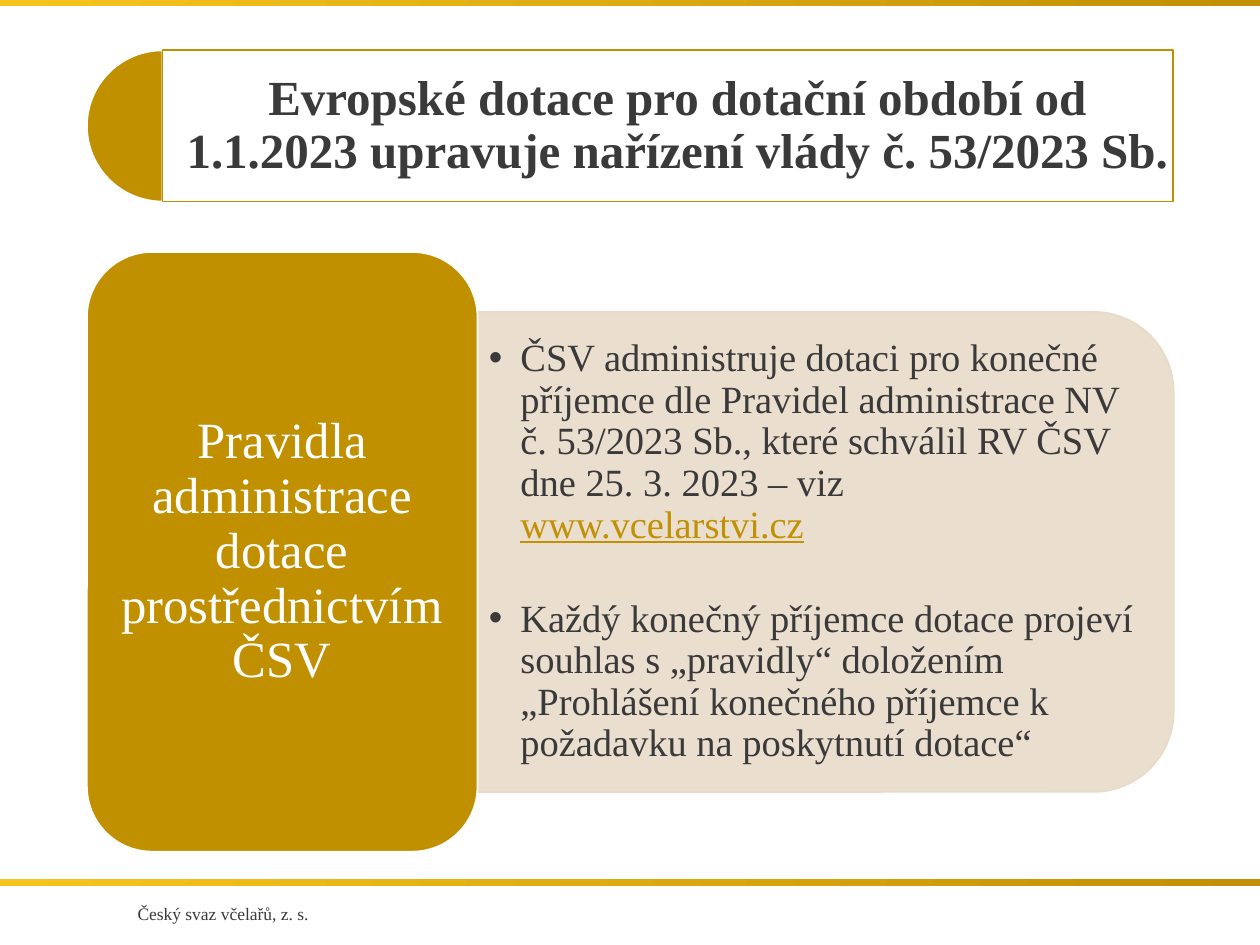
from dataclasses import dataclass

from lxml.etree import SubElement
from pptx import Presentation
from pptx.dml.color import RGBColor
from pptx.enum.shapes import MSO_SHAPE as Preset
from pptx.enum.text import MSO_ANCHOR as Anchor, MSO_AUTO_SIZE as AutoSize, PP_ALIGN as Align
from pptx.oxml.ns import qn
from pptx.util import Inches, Pt


@dataclass(frozen=True)
class Theme:
    font: str = "Times New Roman"
    ink: str = "3A3A3A"
    white: str = "FFFFFF"
    gold: str = "C19000"
    link: str = "C19003"
    bright: str = "F7C41F"
    beige: str = "E8DBCA"
    title_size: float = 28
    card_size: float = 29
    body_size: float = 22
    footer_size: float = 10
    line_spacing: float = 0.9


def rgb(value):
    return RGBColor.from_string(value)


class SlideBuilder:
    """Holds the style and the current slide."""

    def __init__(self, slide, theme):
        self.slide = slide
        self.theme = theme

    def block(self, preset, box, fill, line=None, adjustments=(), rotation=0, opacity=100):
        shape = self.slide.shapes.add_shape(preset, *map(Inches, box))
        shape.shadow.inherit = False
        shape.rotation = rotation
        for index, value in enumerate(adjustments):
            shape.adjustments[index] = value
        shape.fill.solid()
        shape.fill.fore_color.rgb = rgb(fill)
        if opacity < 100:
            color = shape.element.spPr.find(qn("a:solidFill"))[0]
            SubElement(color, qn("a:alpha"), val=str(opacity * 1000))
        if line:
            shape.line.color.rgb = rgb(line)
            shape.line.width = Pt(1)
        else:
            shape.line.fill.background()
        return shape

    def gradient_bar(self, top):
        bar = self.block(Preset.RECTANGLE, (0, top, 10, 0.05), self.theme.gold)
        bar.fill.gradient()
        bar.fill.gradient_angle = 180
        for stop, color in zip(bar.fill.gradient_stops, (self.theme.link, self.theme.bright)):
            stop.color.rgb = rgb(color)

    def frame(self, shape, insets, anchor=Anchor.MIDDLE):
        frame = shape.text_frame
        frame.word_wrap = True
        frame.auto_size = AutoSize.NONE
        frame.vertical_anchor = anchor
        frame.margin_left = frame.margin_right = Inches(insets[0])
        frame.margin_top = frame.margin_bottom = Inches(insets[1])
        return frame

    def run(self, paragraph, text, size, color, bold=False, underline=False):
        run = paragraph.add_run()
        run.text = text
        font = run.font
        font.name, font.size = self.theme.font, Pt(size)
        font.bold, font.underline = bold, underline
        font.color.rgb = rgb(color)

    def centered(self, shape, text, size, color, insets, bold=False,
                 anchor=Anchor.MIDDLE, spacing=None):
        paragraph = self.frame(shape, insets, anchor).paragraphs[0]
        paragraph.alignment = Align.CENTER
        paragraph.space_before = Pt(0)
        paragraph.line_spacing = spacing or self.theme.line_spacing
        self.run(paragraph, text, size, color, bold)

    def textbox(self, box):
        return self.slide.shapes.add_textbox(*map(Inches, box))

    def placeholder(self, index, box):
        """Moves a template placeholder into place, in front of what is drawn."""
        shape = self.slide.placeholders[index]
        shape.left, shape.top, shape.width, shape.height = map(Inches, box)
        shape.element.getparent().append(shape.element)
        return shape

    def bullet(self, paragraph, gap):
        paragraph.alignment = Align.LEFT
        paragraph.line_spacing = self.theme.line_spacing
        paragraph.space_before = Pt(gap)
        properties = paragraph._p.get_or_add_pPr()
        properties.set("marL", str(Inches(0.25)))
        properties.set("indent", str(-Inches(0.25)))
        color = SubElement(properties, qn("a:buClr"))
        SubElement(color, qn("a:srgbClr"), val=self.theme.ink)
        SubElement(properties, qn("a:buChar"), char="•")


def main():
    presentation = Presentation()
    presentation.slide_width, presentation.slide_height = Inches(10), Inches(7.5)
    slide = presentation.slides.add_slide(presentation.slide_layouts[1])
    theme = Theme()
    builder = SlideBuilder(slide, theme)

    # Frame bars and footer
    for top in (6.98, 0):
        builder.gradient_bar(top)
    builder.centered(builder.textbox((0.54, 7.12, 2.46, 0.27)), "Český svaz včelařů, z. s.",
                     theme.footer_size, theme.ink, (0.1, 0.05), anchor=Anchor.TOP, spacing=1.0)

    # Title with half disc
    builder.block(Preset.PIE, (0.69, 0.4, 1.2, 1.2), theme.gold, theme.white, (54, 162))
    builder.block(Preset.RECTANGLE, (1.29, 0.4, 8.02, 1.2), theme.white, theme.gold, opacity=90)
    title = builder.placeholder(0, (1.29, 0.4, 8.17, 1.2))
    builder.centered(title, "Evropské dotace pro dotační období od 1.1.2023 "
                     "upravuje nařízení vlády č. 53/2023 Sb.",
                     theme.title_size, theme.ink, (0.12, 0.12), bold=True)

    # Rules panel with bullets
    builder.block(Preset.ROUND_2_SAME_RECTANGLE, (4.65, 1.62, 3.81, 5.52), theme.beige,
                  theme.beige, (0.167, 0), rotation=90, opacity=90)
    body = builder.frame(builder.placeholder(1, (3.79, 2.66, 5.33, 3.44)), (0.09, 0.05))
    first, second = body.paragraphs[0], body.add_paragraph()
    builder.bullet(first, gap=0)
    builder.run(first, "ČSV administruje dotaci pro konečné příjemce dle Pravidel administrace "
                "NV č. 53/2023 Sb., které schválil RV ČSV dne 25. 3. 2023 – viz",
                theme.body_size, theme.ink)
    first.add_line_break()
    builder.run(first, "www.vcelarstvi.cz", theme.body_size, theme.link, underline=True)
    builder.bullet(second, gap=30)
    builder.run(second, "Každý konečný příjemce dotace projeví souhlas s „pravidly“ doložením "
                "„Prohlášení konečného příjemce k požadavku na poskytnutí dotace“",
                theme.body_size, theme.ink)

    # Topic card
    builder.block(Preset.ROUNDED_RECTANGLE, (0.69, 2, 3.1, 4.76), theme.gold, theme.white, (0.167,))
    builder.centered(builder.textbox((0.84, 2.15, 2.8, 4.46)),
                     "Pravidla administrace dotace prostřednictvím ČSV",
                     theme.card_size, theme.white, (0.12, 0.06))

    presentation.save("out.pptx")


if __name__ == "__main__":
    main()
